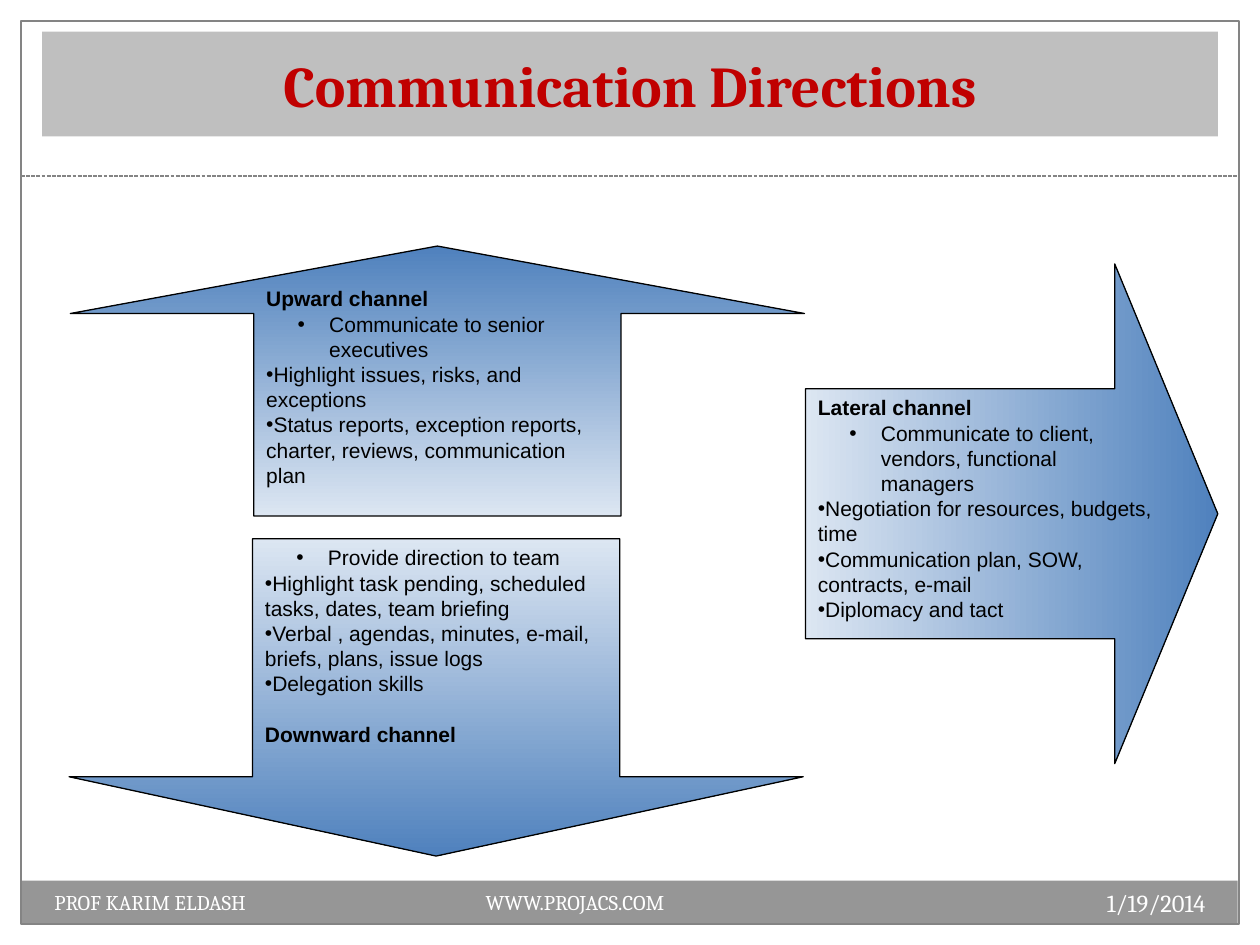
"""Build the slide on communication directions."""
from lxml.etree import SubElement
from pptx import Presentation
from pptx.dml.color import RGBColor
from pptx.enum.dml import MSO_LINE
from pptx.enum.shapes import MSO_CONNECTOR, MSO_SHAPE
from pptx.enum.text import MSO_ANCHOR, MSO_AUTO_SIZE, PP_ALIGN
from pptx.oxml.ns import qn
from pptx.util import Pt

BLACK = RGBColor(0x00, 0x00, 0x00)
WHITE = RGBColor(0xFF, 0xFF, 0xFF)
RED = RGBColor(0xC0, 0x00, 0x00)
SILVER = RGBColor(0xBF, 0xBF, 0xBF)
GREY = RGBColor(0x96, 0x96, 0x96)
EDGE = RGBColor(0x84, 0x84, 0x84)
BLUE = RGBColor(0x4F, 0x81, 0xBD)
PALE = RGBColor(0xDC, 0xE6, 0xF2)
LINE = 14.4

UPWARD = [
    ("head", "Upward channel"),
    ("sub", "Communicate to senior executives"),
    ("item", "Highlight issues, risks, and exceptions"),
    ("item", "Status reports, exception reports, charter, reviews, communication plan"),
]
DOWNWARD = [
    ("sub", "Provide direction to team"),
    ("item", "Highlight task pending, scheduled tasks, dates, team briefing"),
    ("item", "Verbal , agendas, minutes, e-mail, briefs, plans, issue logs"),
    ("item", "Delegation skills"),
    ("head", "Downward channel"),
]
LATERAL = [
    ("head", "Lateral channel"),
    ("sub", "Communicate to client, vendors, functional managers"),
    ("item", "Negotiation for resources, budgets, time"),
    ("item", "Communication plan, SOW, contracts, e-mail"),
    ("item", "Diplomacy and tact"),
]


def style(font, name, size, color, bold=False):
    """Set the face, size, colour and weight of a font."""
    font.name, font.size, font.bold = name, Pt(size), bold
    font.color.rgb = color


def add_box(slide, kind, box):
    """Add a preset shape without a shadow."""
    shape = slide.shapes.add_shape(kind, *map(Pt, box))
    shape.shadow.inherit = False
    return shape


def add_frame(slide):
    """Draw the footer band, the border and the dashed rule."""
    band = add_box(slide, MSO_SHAPE.RECTANGLE, (11.7, 503.3, 695.5, 24.5))
    band.fill.solid()
    band.fill.fore_color.rgb = GREY
    band.line.fill.background()
    border = add_box(slide, MSO_SHAPE.RECTANGLE, (12, 12, 696, 516))
    border.fill.background()
    rule = slide.shapes.add_connector(
        MSO_CONNECTOR.STRAIGHT, Pt(12), Pt(100.6), Pt(708), Pt(100.6))
    SubElement(rule.line._get_or_add_ln().getparent(), qn("a:effectLst"))
    for shape in (border, rule):
        shape.line.color.rgb = EDGE
        shape.line.width = Pt(0.75)
    rule.line.dash_style = MSO_LINE.SQUARE_DOT


def set_title(slide, text):
    """Place and format the title placeholder."""
    title = slide.shapes.title
    title.left, title.top, title.width, title.height = map(Pt, (24, 18, 672, 60))
    title.fill.solid()
    title.fill.fore_color.rgb = SILVER
    frame = title.text_frame
    frame.text = text
    frame.auto_size = MSO_AUTO_SIZE.NONE
    frame.vertical_anchor = MSO_ANCHOR.MIDDLE
    frame.paragraphs[0].alignment = PP_ALIGN.CENTER
    style(frame.paragraphs[0].runs[0].font, "Cambria", 33, RED, True)


def add_bullet(para, left, hang):
    """Give a paragraph a bullet and its indents."""
    props = para._p.get_or_add_pPr()
    props.set("marL", str(Pt(left)))
    props.set("indent", str(-Pt(hang)))
    SubElement(props, qn("a:buFont"), typeface="Arial")
    SubElement(props, qn("a:buChar"), char="•")


def fill_text(frame, rows):
    """Write headings, sub-bullets and bullets into a text frame."""
    frame.word_wrap = True
    frame.vertical_anchor = MSO_ANCHOR.TOP
    for num, (role, text) in enumerate(rows):
        para = frame.add_paragraph() if num else frame.paragraphs[0]
        para.text = text
        para.alignment = PP_ALIGN.LEFT
        if role == "sub":
            para.level = 1
            add_bullet(para, 36, 18)
        elif role == "item":
            add_bullet(para, 0, 0)
        elif num:
            para.space_before = Pt(LINE)
        para.line_spacing = Pt(LINE)
        style(para.runs[0].font, "Arial", 12, BLACK, role == "head")


def add_arrow(slide, kind, box, tones, angle, rows):
    """Add a block arrow with a gradient and its text."""
    arrow = add_box(slide, kind, box)
    arrow.adjustments[0], arrow.adjustments[1] = 0.5, 0.25
    arrow.fill.gradient()
    arrow.fill.gradient_angle = angle
    for stop, tone in zip(arrow.fill.gradient_stops, tones):
        stop.color.rgb = tone
    arrow.line.color.rgb = BLACK
    arrow.line.width = Pt(0.75)
    fill_text(arrow.text_frame, rows)


def add_note(slide, box, text, size, align, tab=None):
    """Add a line of footer text, with a tab stop if one is given."""
    frame = slide.shapes.add_textbox(*map(Pt, box)).text_frame
    frame.word_wrap = True
    para = frame.paragraphs[0]
    para.text = text
    para.alignment = align
    if tab:
        tabs = SubElement(para._p.get_or_add_pPr(), qn("a:tabLst"))
        SubElement(tabs, qn("a:tab"), pos=str(Pt(tab)), algn="l")
    style(para.runs[0].font, "Cambria", size, WHITE)


def main():
    """Build and save the slide."""
    deck = Presentation()
    deck.slide_width, deck.slide_height = Pt(720), Pt(540)
    slide = deck.slides.add_slide(deck.slide_layouts[5])
    add_frame(slide)
    set_title(slide, "Communication Directions")
    add_arrow(slide, MSO_SHAPE.UP_ARROW, (40.2, 140.6, 419.5, 154.3),
              (BLUE, PALE), 270, UPWARD)
    add_arrow(slide, MSO_SHAPE.DOWN_ARROW, (39.5, 307.9, 419.5, 181.3),
              (PALE, BLUE), 270, DOWNWARD)
    add_arrow(slide, MSO_SHAPE.RIGHT_ARROW, (460.3, 150.8, 235.6, 285.6),
              (PALE, BLUE), 0, LATERAL)
    add_note(slide, (456, 504, 240, 28.8), "1/19/2014", 14, PP_ALIGN.RIGHT)
    add_note(slide, (24, 504.7, 438, 28.8), "PROF KARIM ELDASH\tWWW.PROJACS.COM",
             12, PP_ALIGN.LEFT, 246.5)
    deck.save("out.pptx")


if __name__ == "__main__":
    main()
